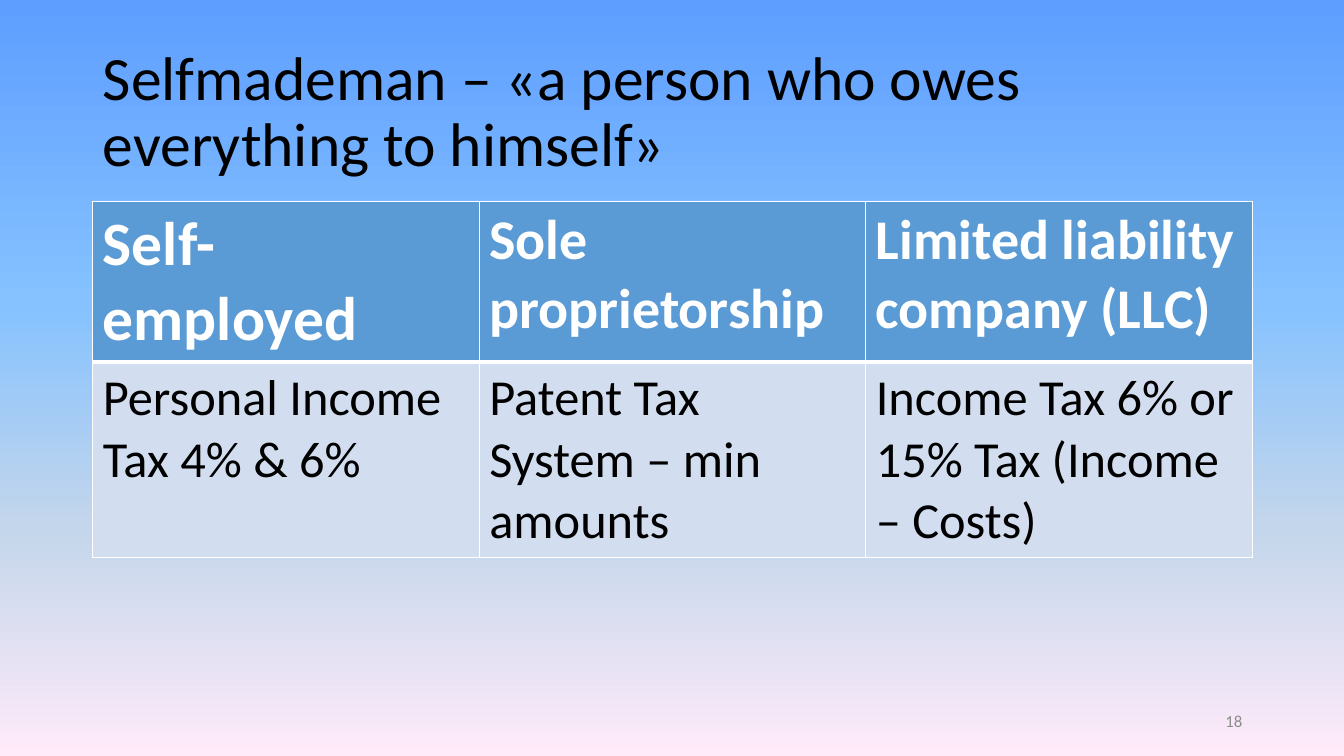
from copy import deepcopy
from pptx import Presentation
from pptx.dml.color import RGBColor as RGB
from pptx.enum.text import MSO_ANCHOR as Anchor, MSO_AUTO_SIZE as Auto, PP_ALIGN as Align
from pptx.oxml import parse_xml
from pptx.oxml.ns import nsdecls, qn
from pptx.util import Inches, Pt

TITLE = "Selfmademan – «a person who owes everything to himself»"
NUMBER = "18"
HEADS = ["Self-employed", "Sole proprietorship", "Limited liability company (LLC)"]
TAXES = ["Personal Income Tax 4% & 6%", "Patent Tax System – min amounts",
         "Income Tax 6% or 15% Tax (Income – Costs)"]

THEME = {
    "font": "Calibri",
    "sky": [(0, "5E9EFF"), (0.4, "85C2FF"), (0.7, "C4D6EB"), (1, "FFEBFA")],
    "title": {"size": 44, "color": "000000", "bold": False},
    "number": {"size": 12, "color": "8C8C8C", "bold": False},
    "head": {"size": 40, "color": "FFFFFF", "bold": True},
    "first": {"size": 44, "color": "FFFFFF", "bold": True},
    "body": {"size": 36, "color": "000000", "bold": False},
    "fills": ["5B9BD5", "D2DEEF"],
    "rule": "FFFFFF",
    "thin": 1,
    "thick": 3,
}

WIDE, HIGH = 13.33, 7.5
LEFT = 0.92
SPAN = WIDE - 2 * LEFT + 0.01
TOP = 2
ROWS = [1.58, 1.93]


def box(*sides):
    return [Inches(side) for side in sides]


def write(frame, text, style, align=Align.LEFT):
    para = frame.paragraphs[0]
    para.alignment = align
    run = para.add_run()
    run.text = text
    look = {"name": THEME["font"], "size": Pt(style["size"]), "bold": style["bold"]}
    for key, value in look.items():
        setattr(run.font, key, value)
    run.font.color.rgb = RGB.from_string(style["color"])
    return para


def paint(slide):
    """Fill the background with the sky gradient, from top to bottom."""
    fill = slide.background.fill
    fill.gradient()
    fill.gradient_angle = 270
    stops = slide.element.find(".//" + qn("a:gsLst"))
    while len(stops) < len(THEME["sky"]):
        stops.append(deepcopy(stops[0]))
    for stop, (place, color) in zip(fill.gradient_stops, THEME["sky"]):
        stop.position = place
        stop.color.rgb = RGB.from_string(color)


def edge(cell, widths):
    """Draw the left, right, top and bottom borders of a cell."""
    props = cell._tc.get_or_add_tcPr()
    for spot, (side, width) in enumerate(zip("LRTB", widths)):
        props.insert(spot, parse_xml(
            f'<a:ln{side} {nsdecls("a")} w="{Pt(width)}"><a:solidFill>'
            f'<a:srgbClr val="{THEME["rule"]}"/></a:solidFill></a:ln{side}>'))


def grid(slide):
    cells = [HEADS, TAXES]
    frame = slide.shapes.add_table(len(cells), len(HEADS), *box(LEFT, TOP, SPAN, sum(ROWS)))
    table = frame.table
    thin, thick = THEME["thin"], THEME["thick"]
    rules = [(thin, thin, thin, thick), (thin, thin, thick, thin)]
    for col in table.columns:
        col.width = Inches(SPAN / len(HEADS))
    for r, texts in enumerate(cells):
        table.rows[r].height = Inches(ROWS[r])
        for c, text in enumerate(texts):
            cell = table.cell(r, c)
            cell.fill.solid()
            cell.fill.fore_color.rgb = RGB.from_string(THEME["fills"][r])
            edge(cell, rules[r])
            style = "body" if r else "head" if c else "first"
            write(cell.text_frame, text, THEME[style])


def main():
    deck = Presentation()
    deck.slide_width, deck.slide_height = box(WIDE, HIGH)
    slide = deck.slides.add_slide(deck.slide_layouts[5])
    paint(slide)

    title = slide.shapes.title
    title.left, title.top, title.width, title.height = box(LEFT, 0.4, SPAN, 1.45)
    write(title.text_frame, TITLE, THEME["title"]).line_spacing = 0.9

    grid(slide)

    number = slide.shapes.add_textbox(*box(LEFT + SPAN - 3, 6.95, 3, 0.4))
    write(number.text_frame, NUMBER, THEME["number"], Align.RIGHT)

    format = {"word_wrap": True, "auto_size": Auto.NONE, "vertical_anchor": Anchor.MIDDLE}
    for shape in (title, number):
        for key, value in format.items():
            setattr(shape.text_frame, key, value)
    deck.save("out.pptx")


if __name__ == "__main__":
    main()
